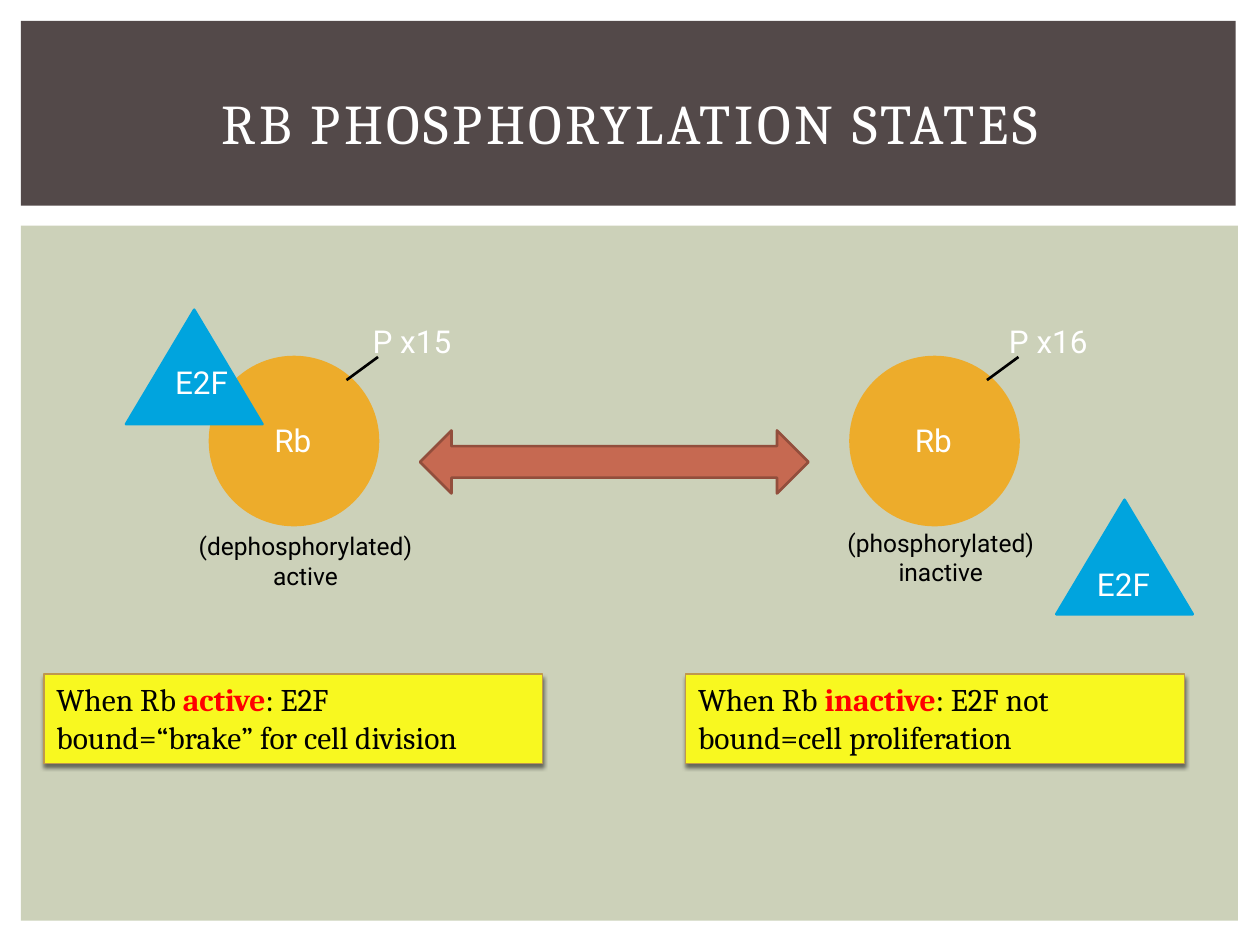
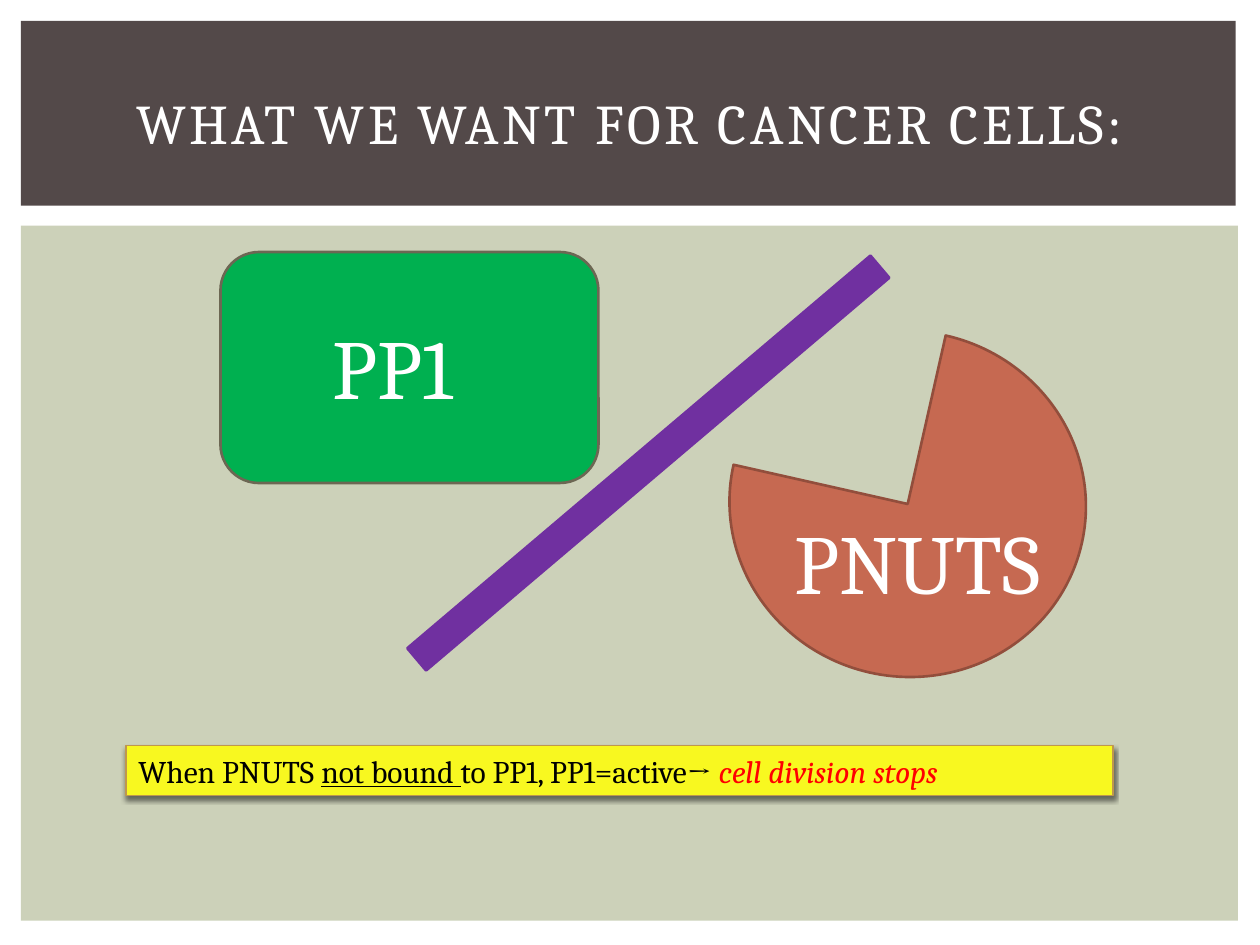
"""Build two slides on Rb states and on PNUTS and PP1 in cancer cells."""
import pptx
import pptx.util
import pptx.dml.color
import pptx.enum.shapes
import pptx.enum.text
import pptx.oxml
import pptx.oxml.ns

RGB = pptx.dml.color.RGBColor
KIND = pptx.enum.shapes.MSO_SHAPE
ALIGN = pptx.enum.text.PP_ALIGN
ANCHOR = pptx.enum.text.MSO_ANCHOR
Pt = pptx.util.Pt

WHITE = RGB(0xFF, 0xFF, 0xFF)
BLACK = RGB(0x00, 0x00, 0x00)
RED = RGB(0xFF, 0x00, 0x00)
SAGE = RGB(0xCC, 0xD1, 0xB9)
BROWN = RGB(0x53, 0x49, 0x49)
AMBER = RGB(0xED, 0xAC, 0x2B)
CLAY = RGB(0xC6, 0x69, 0x51)
RUST = RGB(0x92, 0x4E, 0x3C)
BLUE = RGB(0x00, 0xA4, 0xDE)
LEMON = RGB(0xF8, 0xF8, 0x20)
GOLD = RGB(0xBF, 0x97, 0x4D)
GREEN = RGB(0x00, 0xB0, 0x50)
OLIVE = RGB(0x6C, 0x67, 0x53)
PURPLE = RGB(0x70, 0x30, 0xA0)

TITLE = {"name": "Cambria", "size": Pt(32), "rgb": WHITE}
LABEL = {"name": "Roboto", "size": Pt(18), "rgb": WHITE}
STATE = {"name": "Roboto", "size": Pt(14), "rgb": BLACK}
NOTE = {"name": "Cambria", "size": Pt(18), "rgb": BLACK}
LARGE = {"name": "Cambria", "size": Pt(48), "rgb": WHITE}
SHADE = (
    '<a:outerShdw xmlns:a="http://schemas.openxmlformats.org/drawingml/2006/main" '
    'blurRad="31750" dist="25400" dir="5400000" rotWithShape="0">'
    '<a:srgbClr val="000000"><a:alpha val="50000"/></a:srgbClr></a:outerShdw>'
)

deck = pptx.Presentation()
deck.slide_width = pptx.util.Inches(10)
deck.slide_height = pptx.util.Inches(7.5)
COL = deck.slide_width / 120
ROW = deck.slide_height / 90


def draw(slide, kind, box, fill, edge=None, width=1.5):
    """Add a filled shape at a box given in columns and rows."""
    left, top, wide, high = box
    shape = slide.shapes.add_shape(
        kind, int(left * COL), int(top * ROW), int(wide * COL), int(high * ROW))
    shape.shadow.inherit = False
    shape.fill.solid()
    shape.fill.fore_color.rgb = fill
    if edge is None:
        shape.line.fill.background()
    else:
        shape.line.color.rgb = edge
        shape.line.width = Pt(width)
    return shape


def write(slide, box, lines, form, align=ALIGN.LEFT, anchor=ANCHOR.TOP, shape=None):
    """Put lines of (text, format) runs in a shape or in a new text box."""
    left, top, wide, high = box
    shape = shape or slide.shapes.add_textbox(
        int(left * COL), int(top * ROW), int(wide * COL), int(high * ROW))
    frame = shape.text_frame
    frame.word_wrap = True
    frame.vertical_anchor = anchor
    for n, line in enumerate(lines):
        para = frame.add_paragraph() if n else frame.paragraphs[0]
        para.alignment = align
        for text, extra in line:
            run = para.add_run()
            run.text = text
            for key, value in {**form, **extra}.items():
                if key == "rgb":
                    run.font.color.rgb = value
                else:
                    setattr(run.font, key, value)
    return shape


slides = []
for title in ("RB PHOSPHORYLATION STATES", "WHAT WE WANT FOR CANCER CELLS:"):
    slide = deck.slides.add_slide(deck.slide_layouts[6])
    draw(slide, KIND.RECTANGLE, (2, 21.5, 115.9, 66.2), SAGE)
    draw(slide, KIND.RECTANGLE, (2, 2, 115.7, 17.6), BROWN)
    head = write(slide, (5, 4.7, 110, 13.8), [[(title, {})]], TITLE,
                 ALIGN.CENTER, ANCHOR.MIDDLE)
    head.text_frame.paragraphs[0].runs[0].font._element.set("spc", "200")
    slides.append(slide)
states, goal = slides

draw(states, KIND.LEFT_RIGHT_ARROW, (40, 41, 37, 6), CLAY, RUST)
cells = (
    (20, "P x15", 34.3, "(dephosphorylated)", "active", (17.4, 50, 23.4, 6.8)),
    (81, "P x16", 94.9, "(phosphorylated)", "inactive", (79.2, 49.7, 20.8, 6.8)),
)
for left, count, place, change, state, box in cells:
    draw(states, KIND.OVAL, (left, 34, 16, 16), AMBER, AMBER)
    write(states, (left + 4.95, 39.5, 6.5, 5), [[("Rb", {})]], LABEL)
    bond = states.shapes.add_connector(
        pptx.enum.shapes.MSO_CONNECTOR.STRAIGHT,
        int((left + 13) * COL), int(36.2 * ROW), int((left + 16) * COL), int(34 * ROW))
    bond.line.color.rgb = BLACK
    bond.line.width = Pt(1.5)
    bond._element.spPr.append(pptx.oxml.parse_xml(
        '<a:effectLst xmlns:a="http://schemas.openxmlformats.org/drawingml/2006/main"/>'))
    write(states, (place, 30.1, 11.2, 4.8), [[(count, {})]], LABEL)
    write(states, box, [[(change, {})], [(state, {})]], STATE, ALIGN.CENTER)

for left, top, text_left, text_top in ((12, 29.5, 15.5, 34), (100.6, 47.6, 103.3, 53.2)):
    draw(states, KIND.ISOSCELES_TRIANGLE, (left, top, 13, 10.9), BLUE, BLUE)
    write(states, (text_left, text_top, 8.4, 4.8), [[("E2F", {})]], LABEL)

draw(goal, KIND.ROUNDED_RECTANGLE, (21, 24, 36, 22), GREEN, OLIVE)
draw(goal, KIND.PIE, (70, 31, 32.9, 34), CLAY, RUST).rotation = 282.7
for text, box in (("PP1", (30.5, 29.5, 23.5, 10.9)), ("PNUTS", (74.5, 48, 31, 10.9))):
    write(goal, box, [[(text, {})]], LARGE)

notes = (
    (states, (4.2, 64.2, 47.5, 8.5), [
        ("When Rb ", {}), ("active", {"rgb": RED, "bold": True}),
        (": E2F bound=“brake” for cell division", {})]),
    (states, (65.3, 64.2, 47.5, 8.5), [
        ("When Rb ", {}), ("inactive", {"rgb": RED, "bold": True}),
        (": E2F not bound=cell proliferation", {})]),
    (goal, (12, 71, 94, 4.8), [
        ("When PNUTS ", {}), ("not bound ", {"underline": True}),
        ("to PP1, PP1=active→ ", {}),
        ("cell division stops", {"rgb": RED, "italic": True})]),
)
for slide, box, line in notes:
    note = draw(slide, KIND.RECTANGLE, box, LEMON, GOLD, 0.79)
    shades = note._element.spPr.find(pptx.oxml.ns.qn("a:effectLst"))
    shades.append(pptx.oxml.parse_xml(SHADE))
    write(slide, box, [line], NOTE, shape=note)

draw(goal, KIND.MATH_MINUS, (22.4, 38.2, 78.7, 11.8), PURPLE, PURPLE).rotation = 319.7

deck.save("out.pptx")
